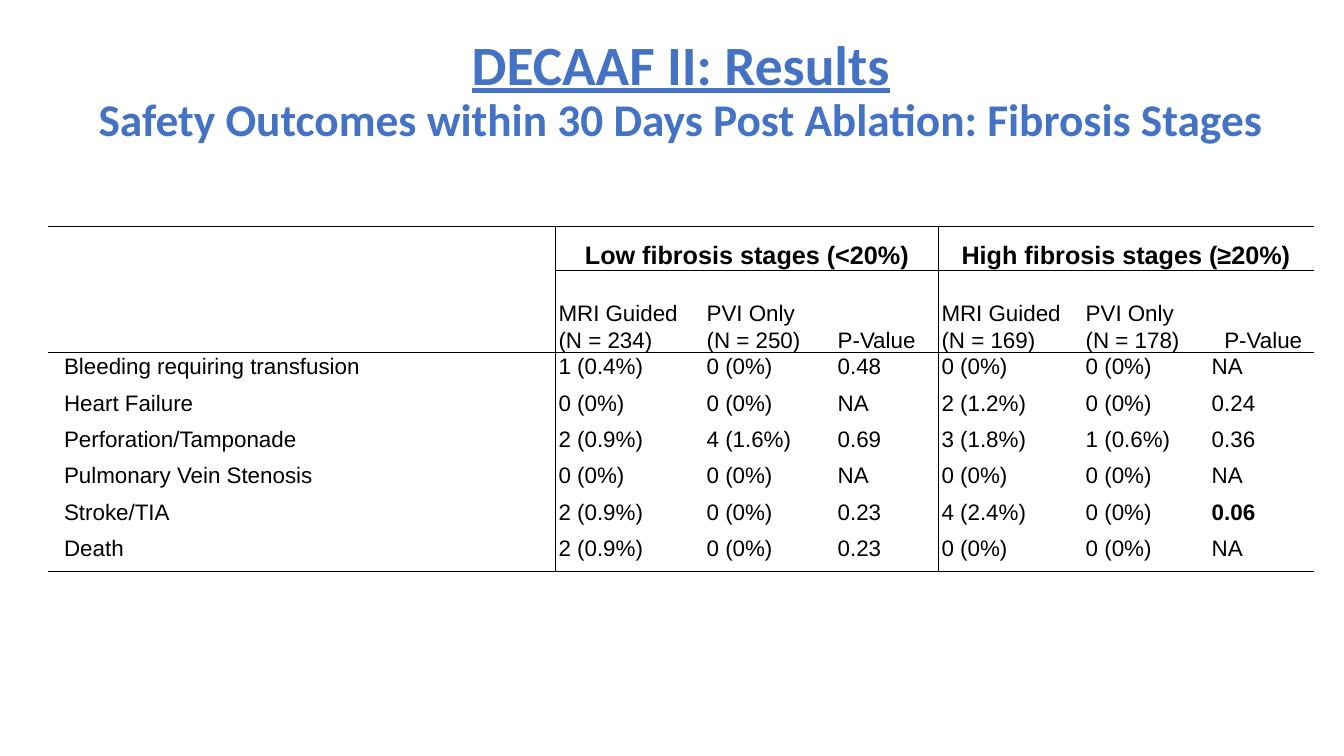
from lxml.etree import SubElement
from pptx import Presentation
from pptx.dml.color import RGBColor
from pptx.enum.text import MSO_ANCHOR, PP_ALIGN
from pptx.oxml.ns import qn
from pptx.util import Pt

COLORS = {"title": "4472C4", "text": "000000", "rule": "000000", "cell": "FFFFFF"}

COLUMN_WIDTHS = [362.2, 105.8, 93.6, 74.2, 103, 90, 74.9]
ROW_HEIGHTS = [31, 59] + [26] * 6
INDENT = 9

STAGES = {1: "Low fibrosis stages (<20%)", 4: "High fibrosis stages (≥20%)"}
ARMS = [
    "MRI Guided\n(N = 234)", "PVI Only\n(N = 250)", "P-Value",
    "MRI Guided\n(N = 169)", "PVI Only\n(N = 178)", "P-Value",
]
OUTCOMES = [
    ["Bleeding requiring transfusion", "1 (0.4%)", "0 (0%)", "0.48", "0 (0%)", "0 (0%)", "NA"],
    ["Heart Failure", "0 (0%)", "0 (0%)", "NA", "2 (1.2%)", "0 (0%)", "0.24"],
    ["Perforation/Tamponade", "2 (0.9%)", "4 (1.6%)", "0.69", "3 (1.8%)", "1 (0.6%)", "0.36"],
    ["Pulmonary Vein Stenosis", "0 (0%)", "0 (0%)", "NA", "0 (0%)", "0 (0%)", "NA"],
    ["Stroke/TIA", "2 (0.9%)", "0 (0%)", "0.23", "4 (2.4%)", "0 (0%)", "0.06"],
    ["Death", "2 (0.9%)", "0 (0%)", "0.23", "0 (0%)", "0 (0%)", "NA"],
]
HIGHLIGHT = "0.06"


def add_text(para, text, size=16, font="Arial", color="text", bold=False, underline=False):
    """Append formatted text to a paragraph, with a line break at each newline."""
    for number, line in enumerate(text.split("\n")):
        if number:
            para.add_line_break()
        span = para.add_run()
        span.text = line
        span.font.size = Pt(size)
        span.font.name = font
        span.font.bold = bold
        span.font.underline = underline
        span.font.color.rgb = RGBColor.from_string(COLORS[color])


def add_title(page):
    box = page.shapes.add_textbox(Pt(58.3), Pt(39.6), Pt(856), Pt(51.8))
    box.text_frame.word_wrap = True
    box.text_frame.vertical_anchor = MSO_ANCHOR.MIDDLE
    para = box.text_frame.paragraphs[0]
    para.alignment = PP_ALIGN.CENTER
    para.line_spacing = 0.9
    title = {"font": "Calibri", "color": "title", "bold": True}
    add_text(para, "DECAAF II: Results", size=39.6, underline=True, **title)
    para.add_line_break()
    add_text(para, "Safety Outcomes within 30 Days Post Ablation: Fibrosis Stages",
             size=32.4, **title)


def fill_cell(cell, text, anchor=MSO_ANCHOR.TOP, align=PP_ALIGN.LEFT, indent=0, **text_format):
    cell.margin_left = cell.margin_right = Pt(2.2)
    cell.margin_top = cell.margin_bottom = Pt(0)
    cell.vertical_anchor = anchor
    para = cell.text_frame.paragraphs[0]
    para.alignment = align
    para.line_spacing = 1.07
    para.space_after = Pt(2.5)
    if indent:
        properties = para._p.get_or_add_pPr()
        properties.set("marL", str(Pt(indent)))
        properties.set("indent", "0")
    add_text(para, text, **text_format)


def style_cell(cell, row, column):
    """Draw the rules around one cell, then its fill."""
    bottom, right = row + cell.span_height, column + cell.span_width

    def ruled_across(line):
        return line in (0, 2, len(ROW_HEIGHTS)) or (line == 1 and column > 0)

    edges = {"L": column in STAGES, "R": right in STAGES,
             "T": ruled_across(row), "B": ruled_across(bottom)}
    properties = cell._tc.get_or_add_tcPr()
    for side, ruled in edges.items():
        line = SubElement(properties, qn(f"a:ln{side}"), w=str(Pt(1)))
        if ruled:
            solid = SubElement(line, qn("a:solidFill"))
            SubElement(solid, qn("a:srgbClr"), val=COLORS["rule"])
        else:
            SubElement(line, qn("a:noFill"))
    cell.fill.solid()
    cell.fill.fore_color.rgb = RGBColor.from_string(COLORS["cell"])


def add_outcomes_table(page):
    table = page.shapes.add_table(
        len(ROW_HEIGHTS), len(COLUMN_WIDTHS), Pt(34.6), Pt(162),
        Pt(sum(COLUMN_WIDTHS)), Pt(sum(ROW_HEIGHTS))).table
    table.first_row = table.horz_banding = False
    for column, width in zip(table.columns, COLUMN_WIDTHS):
        column.width = Pt(width)
    for row, height in zip(table.rows, ROW_HEIGHTS):
        row.height = Pt(height)

    # Header rows
    table.cell(0, 0).merge(table.cell(1, 0))
    for column, stage in STAGES.items():
        table.cell(0, column).merge(table.cell(0, column + 2))
        fill_cell(table.cell(0, column), stage, anchor=MSO_ANCHOR.BOTTOM,
                  align=PP_ALIGN.CENTER, size=18, bold=True)
    for column, arm in enumerate(ARMS, start=1):
        fill_cell(table.cell(1, column), arm, anchor=MSO_ANCHOR.BOTTOM,
                  indent=INDENT if column == len(ARMS) else 0)

    # Outcome rows
    for row, values in enumerate(OUTCOMES, start=2):
        for column, value in enumerate(values):
            fill_cell(table.cell(row, column), value, bold=value == HIGHLIGHT,
                      indent=0 if column else INDENT)

    # Rules and fills
    for row in range(len(ROW_HEIGHTS)):
        for column in range(len(COLUMN_WIDTHS)):
            style_cell(table.cell(row, column), row, column)


def main():
    deck = Presentation()
    deck.slide_width, deck.slide_height = Pt(960), Pt(540)
    page = deck.slides.add_slide(deck.slide_layouts[6])
    add_title(page)
    add_outcomes_table(page)
    deck.save("out.pptx")


if __name__ == "__main__":
    main()
